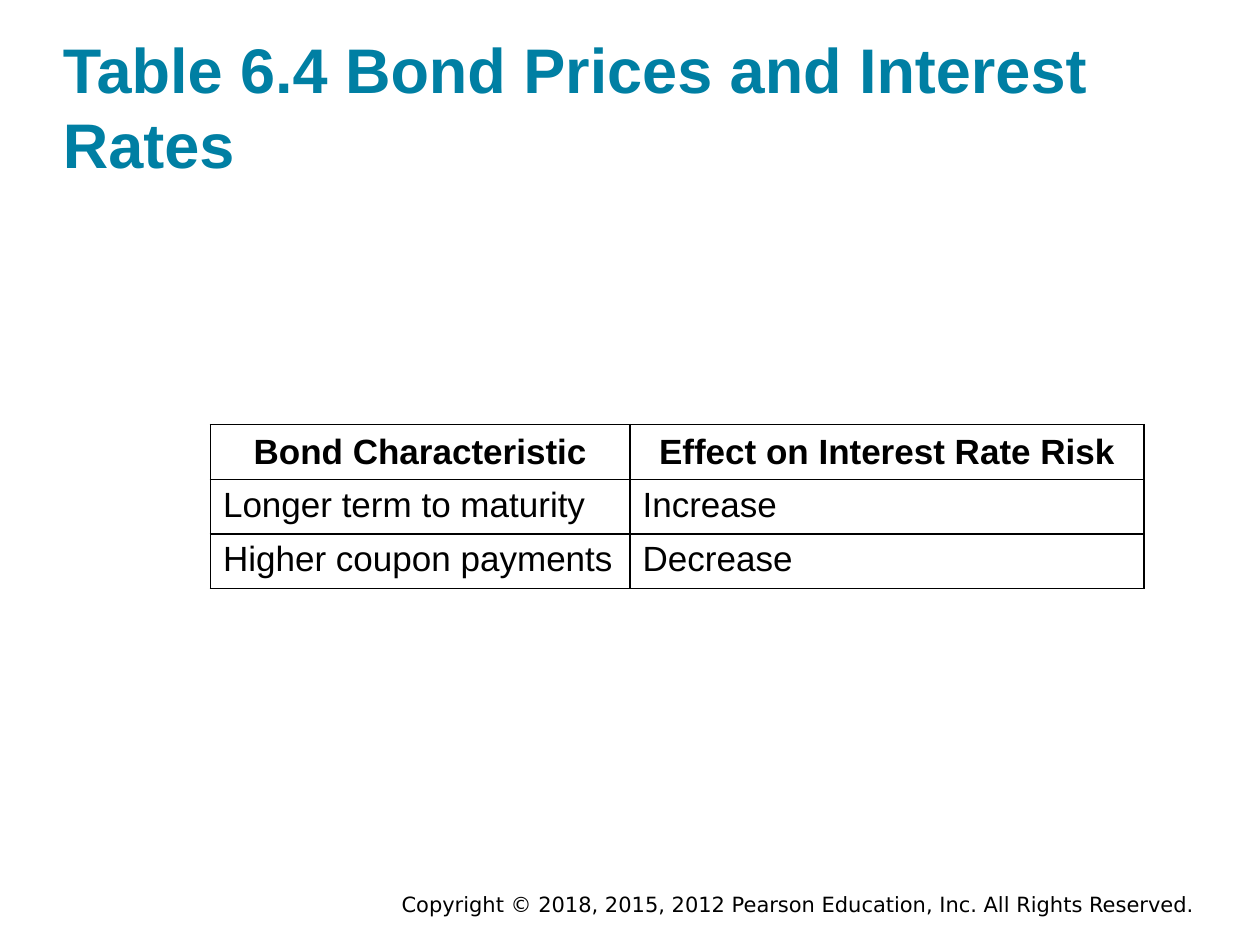
from lxml import etree
from pptx import Presentation
from pptx import util as u
from pptx.dml.color import RGBColor
from pptx.enum import text
from pptx.oxml import ns

TEAL = RGBColor(0x00, 0x7F, 0xA3)
BLACK = RGBColor(0x00, 0x00, 0x00)
WHITE = RGBColor(0xFF, 0xFF, 0xFF)


def style(paragraph, font_name, size, color, bold=False, align=text.PP_ALIGN.LEFT):
    paragraph.alignment = align
    for run in paragraph.runs:
        run.font.name = font_name
        run.font.size = u.Pt(size)
        run.font.bold = bold
        run.font.color.rgb = color


def add_borders(cell, color, width):
    properties = cell._tc.get_or_add_tcPr()
    for side in ("lnL", "lnR", "lnT", "lnB"):
        line = etree.SubElement(properties, ns.qn(f"a:{side}"), w=str(u.Pt(width)))
        fill = etree.SubElement(line, ns.qn("a:solidFill"))
        etree.SubElement(fill, ns.qn("a:srgbClr"), val=str(color))


presentation = Presentation()
presentation.slide_width = u.Inches(10)
presentation.slide_height = u.Inches(7.5)
slide = presentation.slides.add_slide(presentation.slide_layouts[6])

# Copyright line
footer = slide.shapes.add_textbox(u.Inches(1.75), u.Inches(7.03), u.Inches(7.83), u.Inches(0.3))
footer.text_frame.word_wrap = True
footer.text_frame.text = "Copyright © 2018, 2015, 2012 Pearson Education, Inc. All Rights Reserved."
style(footer.text_frame.paragraphs[0], "DejaVu Sans", 12, BLACK, align=text.PP_ALIGN.RIGHT)

# Title
title = slide.shapes.add_textbox(u.Inches(0.5), u.Inches(0.24), u.Inches(9), u.Inches(1.2))
frame = title.text_frame
frame.word_wrap = True
frame.vertical_anchor = text.MSO_ANCHOR.BOTTOM
frame.margin_left = frame.margin_right = frame.margin_top = frame.margin_bottom = 0
frame.text = "Table 6.4 Bond Prices and Interest Rates"
style(frame.paragraphs[0], "Arial", 36, TEAL, bold=True)

# Bond table
rows = [
    ("Bond Characteristic", "Effect on Interest Rate Risk"),
    ("Longer term to maturity", "Increase"),
    ("Higher coupon payments", "Decrease"),
]
column_widths = (3.33, 4.08)
row_height = 0.41
table = slide.shapes.add_table(
    len(rows), len(column_widths), u.Inches(1.67), u.Inches(3.37),
    u.Inches(sum(column_widths)), u.Inches(row_height * len(rows)),
).table
for column, width in zip(table.columns, column_widths):
    column.width = u.Inches(width)

for row_index, row in enumerate(rows):
    table.rows[row_index].height = u.Inches(row_height)
    is_header = row_index == 0
    for column_index, words in enumerate(row):
        cell = table.cell(row_index, column_index)
        add_borders(cell, BLACK, 1)
        cell.fill.solid()
        cell.fill.fore_color.rgb = WHITE
        cell.vertical_anchor = text.MSO_ANCHOR.MIDDLE if is_header else text.MSO_ANCHOR.TOP
        cell.text_frame.text = words
        align = text.PP_ALIGN.CENTER if is_header else text.PP_ALIGN.LEFT
        style(cell.text_frame.paragraphs[0], "Arial", 20, BLACK, is_header, align)

presentation.save("out.pptx")
